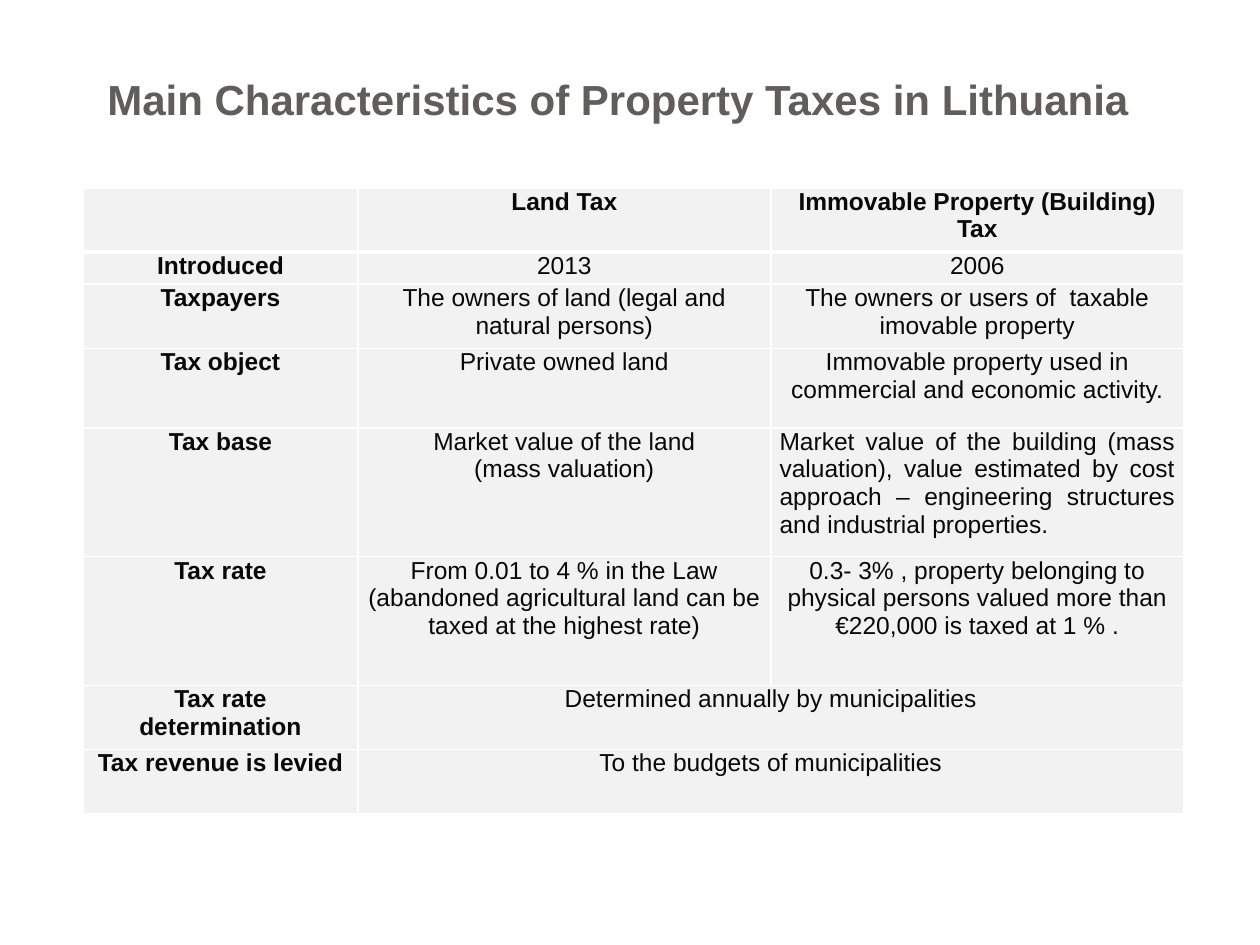
"""Build a slide with a table comparing property taxes in Lithuania."""
from lxml import etree
from pptx import Presentation
from pptx.dml.color import RGBColor
from pptx.enum.text import MSO_ANCHOR, PP_ALIGN
from pptx.oxml.ns import qn
from pptx.util import Pt

CENTER, JUSTIFY = PP_ALIGN.CENTER, PP_ALIGN.JUSTIFY
MIDDLE = MSO_ANCHOR.MIDDLE
TITLE_COLOR, TEXT_COLOR = "605D5C", "080808"
CELL_COLOR, RULE_COLOR = "F2F2F2", "FFFFFF"

COLUMN_WIDTHS = [157, 236, 236]
ROWS = [
    (36.75, ["", "Land Tax", "Immovable Property (Building) Tax"]),
    (18.4, ["Introduced", "2013", "2006"]),
    (36.75, ["Taxpayers", "The owners of land (legal and natural persons)",
             "The owners or users of  taxable imovable property"]),
    (45.5, ["Tax object", "Private owned land",
            "Immovable property used in commercial and economic activity."]),
    (73.5, ["Tax base", "Market value of the land\n(mass valuation)",
            "Market value of the building (mass valuation), value estimated by cost "
            "approach – engineering structures and industrial properties."]),
    (73.5, ["Tax rate",
            "From 0.01 to 4 % in the Law (abandoned agricultural land can be "
            "taxed at the highest rate)",
            "0.3- 3% , property belonging to physical persons valued more than "
            "€220,000 is taxed at 1 % ."]),
    (36.75, ["Tax rate determination", "Determined annually by municipalities"]),
    (36.75, ["Tax revenue is levied", "To the budgets of municipalities"]),
]


def write(frame, text, size=14, color=TEXT_COLOR, bold=False, align=CENTER):
    frame.text = text
    for paragraph in frame.paragraphs:
        paragraph.alignment = align
        font = paragraph.font
        for run in paragraph.runs:
            font = run.font
        font.name, font.size, font.bold = "Arial", Pt(size), bold
        font.color.rgb = RGBColor.from_string(color)


def add_borders(cell, bottom):
    properties = cell._tc.get_or_add_tcPr()
    for position, (side, width) in enumerate(
            [("lnL", 1), ("lnR", 1), ("lnT", 1), ("lnB", bottom)]):
        line = etree.Element(qn(f"a:{side}"), w=str(Pt(width)))
        fill = etree.SubElement(line, qn("a:solidFill"))
        etree.SubElement(fill, qn("a:srgbClr"), val=RULE_COLOR)
        properties.insert(position, line)


prs = Presentation()
prs.slide_width, prs.slide_height = Pt(720), Pt(540)
slide = prs.slides.add_slide(prs.slide_layouts[6])

title = slide.shapes.add_textbox(Pt(26), Pt(36.75), Pt(661), Pt(39)).text_frame
title.word_wrap = True
title.vertical_anchor = MIDDLE
write(title, "Main Characteristics of Property Taxes in Lithuania ",
      size=24, color=TITLE_COLOR, bold=True)

taxes = slide.shapes.add_table(
    len(ROWS), len(COLUMN_WIDTHS), Pt(47.5), Pt(107.3),
    Pt(sum(COLUMN_WIDTHS)), Pt(sum(height for height, _ in ROWS))).table
for column, width in zip(taxes.columns, COLUMN_WIDTHS):
    column.width = Pt(width)

for r, (height, texts) in enumerate(ROWS):
    taxes.rows[r].height = Pt(height)
    if len(texts) < len(COLUMN_WIDTHS):
        taxes.cell(r, 1).merge(taxes.cell(r, 2))
    for c in range(len(COLUMN_WIDTHS)):
        cell = taxes.cell(r, c)
        cell.margin_left = cell.margin_right = Pt(5)
        cell.margin_top = cell.margin_bottom = Pt(0)
        cell.fill.solid()
        cell.fill.fore_color.rgb = RGBColor.from_string(CELL_COLOR)
        add_borders(cell, bottom=3 if r == 0 else 1)
        if c < len(texts):
            write(cell.text_frame, texts[c], bold=r == 0 or c == 0,
                  align=JUSTIFY if (r, c) == (4, 2) else CENTER)

prs.save("out.pptx")
